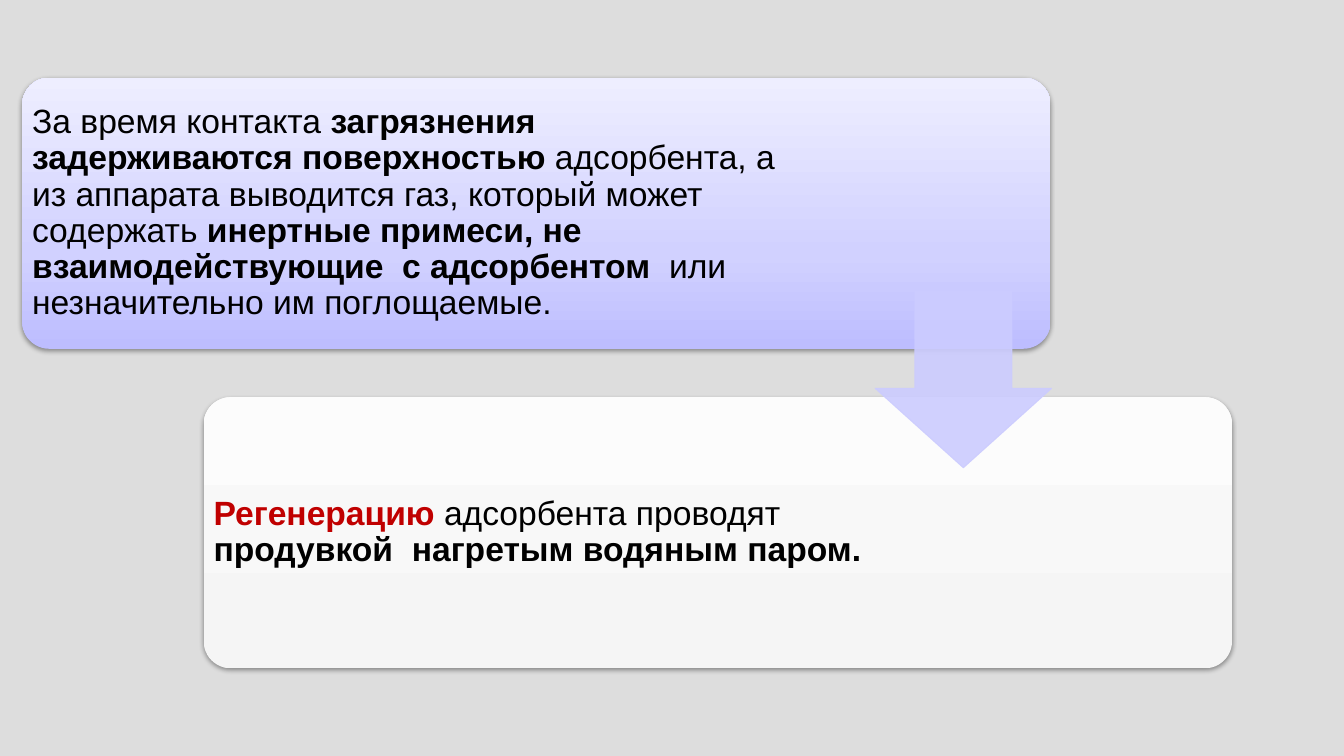
from dataclasses import dataclass

from pptx import Presentation
from pptx.dml.color import RGBColor
from pptx.enum.shapes import MSO_SHAPE as Preset
from pptx.enum.text import MSO_ANCHOR as Anchor
from pptx.oxml import parse_xml
from pptx.oxml.ns import nsdecls, qn
from pptx.shapes.autoshape import Shape
from pptx.slide import Slide
from pptx.util import Inches, Pt

COLORS = {
    "background": "DDDDDD",
    "text": "000000",
    "accent": "C00000",
    "arrow": "CCCCFF",
    "shadow": "000000",
}
LILAC = {0: "BDBDFF", 35: "D1D1FF", 100: "EEEEFF"}
PALE_GREY = {0: "F5F5F5", 35: "F8F8F8", 100: "FCFCFC"}
CARD_WIDTH, CARD_HEIGHT = 10.2, 2.69
ARROW_SIZE = 1.75


@dataclass(frozen=True)
class Phrase:
    text: str
    bold: bool = False
    color: str = "text"


@dataclass(frozen=True)
class Step:
    left: float
    top: float
    text_width: float
    gradient: dict[int, str]
    phrases: tuple[Phrase, ...]


STEPS = (
    Step(0.22, 0.77, 7.58, LILAC, (
        Phrase("За время контакта "),
        Phrase("загрязнения задерживаются поверхностью ", bold=True),
        Phrase("адсорбента, а из аппарата выводится газ, который может содержать "),
        Phrase("инертные примеси, не взаимодействующие  с адсорбентом  ", bold=True),
        Phrase("или незначительно им поглощаемые."),
    )),
    Step(2.02, 3.94, 6.66, PALE_GREY, (
        Phrase("Регенерацию", bold=True, color="accent"),
        Phrase(" адсорбента проводят "),
        Phrase("продувкой  нагретым водяным паром.", bold=True),
    )),
)


def rgb(name: str) -> RGBColor:
    return RGBColor.from_string(COLORS[name])


def fill_upward(shape: Shape, stops: dict[int, str]) -> None:
    """Fill with a gradient that runs from the bottom edge to the top."""
    shape.fill.gradient()
    shape.fill.gradient_angle = 90
    gradient = shape.element.spPr.find(qn("a:gradFill"))
    stops_xml = "".join(
        f'<a:gs pos="{percent * 1000}"><a:srgbClr val="{color}"/></a:gs>'
        for percent, color in stops.items()
    )
    gradient.replace(
        gradient.find(qn("a:gsLst")),
        parse_xml(f'<a:gsLst {nsdecls("a")}>{stops_xml}</a:gsLst>'),
    )


def add_soft_shadow(shape: Shape) -> None:
    shape.shadow.inherit = False
    shape.element.spPr.find(qn("a:effectLst")).append(parse_xml(
        f'<a:outerShdw {nsdecls("a")} blurRad="{Pt(3.1)}" dist="{Pt(1.6)}" '
        f'dir="5400000" rotWithShape="0"><a:srgbClr val="{COLORS["shadow"]}">'
        '<a:alpha val="38000"/></a:srgbClr></a:outerShdw>'
    ))


def add_card(slide: Slide, step: Step) -> None:
    card = slide.shapes.add_shape(
        Preset.ROUNDED_RECTANGLE, Inches(step.left), Inches(step.top),
        Inches(CARD_WIDTH), Inches(CARD_HEIGHT))
    card.adjustments[0] = 0.1
    fill_upward(card, step.gradient)
    card.line.fill.background()
    add_soft_shadow(card)


def add_statement(slide: Slide, step: Step) -> None:
    statement = slide.shapes.add_textbox(
        Inches(step.left), Inches(step.top),
        Inches(step.text_width), Inches(CARD_HEIGHT))
    frame = statement.text_frame
    frame.word_wrap = True
    frame.vertical_anchor = Anchor.MIDDLE
    frame.margin_left = frame.margin_right = Inches(0.1)
    frame.margin_top = frame.margin_bottom = Inches(0.1)
    paragraph = frame.paragraphs[0]
    paragraph.line_spacing = 0.9
    for phrase in step.phrases:
        run = paragraph.add_run()
        run.text = phrase.text
        run.font.name = "Arial"
        run.font.size = Pt(24)
        run.font.bold = phrase.bold
        run.font.color.rgb = rgb(phrase.color)


def add_transition_arrow(slide: Slide) -> None:
    arrow = slide.shapes.add_shape(
        Preset.DOWN_ARROW, Inches(8.68), Inches(2.89),
        Inches(ARROW_SIZE), Inches(ARROW_SIZE))
    arrow.adjustments[0] = 0.55
    arrow.adjustments[1] = 0.45
    arrow.shadow.inherit = False
    arrow.fill.solid()
    arrow.fill.fore_color.rgb = rgb("arrow")
    arrow.line.color.rgb = rgb("arrow")
    arrow.line.width = Pt(0.75)
    for color in arrow.element.spPr.iter(qn("a:srgbClr")):
        color.append(parse_xml(f'<a:alpha {nsdecls("a")} val="90000"/>'))


def main() -> None:
    deck = Presentation()
    deck.slide_width, deck.slide_height = Inches(13.33), Inches(7.5)
    slide = deck.slides.add_slide(deck.slide_layouts[6])
    slide.background.fill.solid()
    slide.background.fill.fore_color.rgb = rgb("background")
    for step in STEPS:
        add_card(slide, step)
        add_statement(slide, step)
    add_transition_arrow(slide)
    deck.save("out.pptx")


if __name__ == "__main__":
    main()
